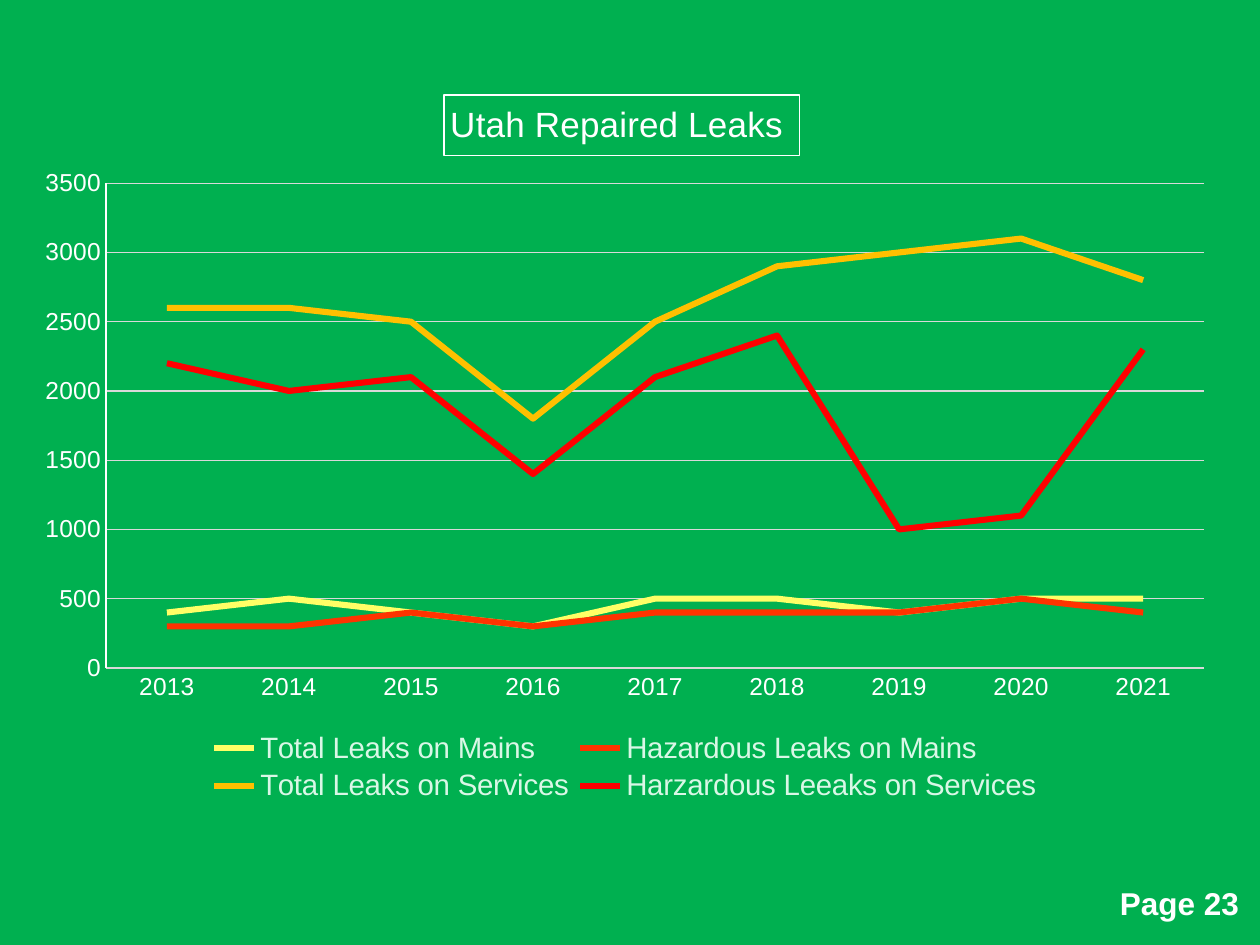
from dataclasses import dataclass
from typing import Optional

from lxml.etree import SubElement
from pptx import Presentation
from pptx.chart.data import CategoryChartData
from pptx.dml.color import RGBColor
from pptx.enum.chart import XL_CHART_TYPE as ChartType
from pptx.enum.chart import XL_LEGEND_POSITION as LegendPos
from pptx.enum.chart import XL_TICK_MARK as Tick
from pptx.enum.text import MSO_AUTO_SIZE as AutoSize
from pptx.oxml.ns import qn
from pptx.util import Inches, Pt


@dataclass(frozen=True)
class Theme:
    font: str = "Arial"
    background: str = "00B050"
    text: str = "FFFFFF"
    legend: str = "D9F7E6"
    grid: str = "D9D9D9"
    title_pt: float = 20
    page_pt: float = 18
    legend_pt: float = 16.8
    axis_pt: float = 14
    line_pt: float = 3.5
    hairline_pt: float = 0.75


@dataclass(frozen=True)
class Box:
    x: float
    y: float
    w: Optional[float] = None
    h: Optional[float] = None


@dataclass(frozen=True)
class LeakSeries:
    name: str
    color: str
    hundreds: tuple[int, ...]


THEME = Theme()
WIDTH, HEIGHT = 10, 7.5
YEARS = range(2013, 2022)
SERIES = (
    LeakSeries("Total Leaks on Mains", "FFFF66", (4, 5, 4, 3, 5, 5, 4, 5, 5)),
    LeakSeries("Hazardous Leaks on Mains", "FF3300", (3, 3, 4, 3, 4, 4, 4, 5, 4)),
    LeakSeries("Total Leaks on Services", "FFC000", (26, 26, 25, 18, 25, 29, 30, 31, 28)),
    LeakSeries("Harzardous Leeaks on Services", "FF0000", (22, 20, 21, 14, 21, 24, 10, 11, 23)),
)


def set_font(font, size: float, color: str, bold: bool = False) -> None:
    font.name, font.size, font.bold = THEME.font, Pt(size), bold
    font.color.rgb = RGBColor.from_string(color)


def set_line(line, color: str, width: float) -> None:
    line.color.rgb = RGBColor.from_string(color)
    line.width = Pt(width)


def place(part, box: Box, inner: bool = False) -> None:
    for old in part.findall(qn("c:layout")):
        part.remove(old)
    layout = SubElement(part, qn("c:layout"))
    manual = SubElement(layout, qn("c:manualLayout"))
    if inner:
        SubElement(manual, qn("c:layoutTarget")).set("val", "inner")
    for key in ("x", "y"):
        SubElement(manual, qn(f"c:{key}Mode")).set("val", "edge")
    for key in ("x", "y", "w", "h"):
        share = getattr(box, key)
        if share is not None:
            SubElement(manual, qn(f"c:{key}")).set("val", str(share))
    overlay = part.find(qn("c:overlay"))
    if overlay is None:
        part.insert(0, layout)
    else:
        overlay.addprevious(layout)


def style_axis(axis, color: str) -> None:
    axis.major_tick_mark = axis.minor_tick_mark = Tick.NONE
    set_font(axis.tick_labels.font, THEME.axis_pt, THEME.text)
    set_line(axis.format.line, color, THEME.hairline_pt)


def style_title(chart, text: str) -> None:
    chart.has_title = True
    title = chart.chart_title
    r = title.text_frame.paragraphs[0].add_run()
    r.text = text
    set_font(r.font, THEME.title_pt, THEME.text)
    set_line(title.format.line, THEME.text, THEME.hairline_pt)
    place(title._element, Box(0.35, 0.03))


def style_legend(chart) -> None:
    chart.has_legend = True
    legend = chart.legend
    legend.position = LegendPos.BOTTOM
    legend.include_in_layout = False
    set_font(legend.font, THEME.legend_pt, THEME.legend)
    place(legend._element, Box(0.15, 0.89, 0.7, 0.11))


def add_leak_chart(slide, box: Box) -> None:
    data = CategoryChartData(number_format="General")
    data.categories = [str(year) for year in YEARS]
    for leak in SERIES:
        data.add_series(leak.name, [100 * n for n in leak.hundreds])
    chart = slide.shapes.add_chart(
        ChartType.LINE, Inches(box.x), Inches(box.y), Inches(box.w), Inches(box.h), data
    ).chart
    set_font(chart.font, THEME.axis_pt, THEME.text)
    style_title(chart, "Utah Repaired Leaks ")
    style_legend(chart)
    style_axis(chart.category_axis, THEME.grid)
    values = chart.value_axis
    style_axis(values, THEME.text)
    values.minimum_scale, values.maximum_scale, values.major_unit = 0, 3500, 500
    values.has_major_gridlines = True
    set_line(values.major_gridlines.format.line, THEME.grid, THEME.hairline_pt)
    plot = chart.plots[0]
    plot.vary_by_categories = False
    for series, leak in zip(plot.series, SERIES):
        series.smooth = False
        set_line(series.format.line, leak.color, THEME.line_pt)
    place(chart._chartSpace.chart.plotArea, Box(0.07, 0.15, 0.91, 0.66), inner=True)


def add_page_label(slide, text: str, box: Box) -> None:
    sp = slide.shapes.add_textbox(
        Inches(box.x), Inches(box.y), Inches(box.w), Inches(box.h)
    )
    tf = sp.text_frame
    tf.word_wrap = False
    tf.auto_size = AutoSize.SHAPE_TO_FIT_TEXT
    r = tf.paragraphs[0].add_run()
    r.text = text
    set_font(r.font, THEME.page_pt, THEME.text, bold=True)


def main() -> None:
    prs = Presentation()
    prs.slide_width, prs.slide_height = Inches(WIDTH), Inches(HEIGHT)
    slide = prs.slides.add_slide(prs.slide_layouts[6])
    fill = slide.background.fill
    fill.solid()
    fill.fore_color.rgb = RGBColor.from_string(THEME.background)
    add_page_label(slide, "Page 23", Box(8.79, 6.97, 1.17, 0.4))
    add_leak_chart(slide, Box(0.17, 0.58, 9.58, 5.83))
    prs.save("out.pptx")


if __name__ == "__main__":
    main()
